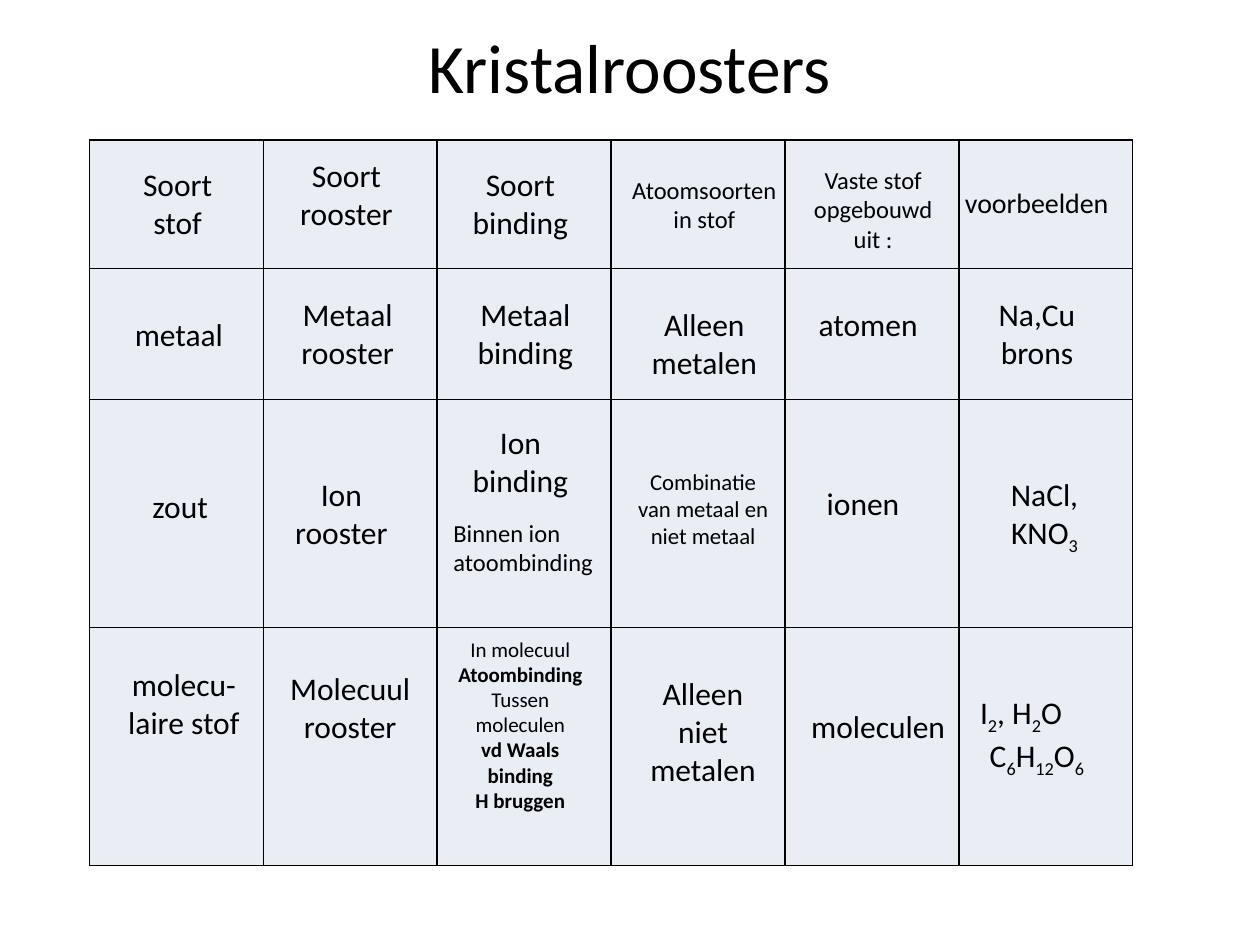
from lxml.etree import SubElement
from pptx import Presentation
from pptx.dml.color import RGBColor
from pptx.enum.text import MSO_ANCHOR, MSO_AUTO_SIZE, PP_ALIGN
from pptx.oxml.ns import qn
from pptx.util import Inches, Pt

COLORS = {"ink": "000000", "cell": "E9EDF4"}
FONT = "Calibri"
ROWS = [1.02, 1.04, 1.81, 1.89]
COLS = [1.38] * 6

# Left, top, width, height, size, text; "~" switches subscript, "*" starts a bold line
LABELS = [
    # Head row
    (0.94, 1.26, 0.94, 0.71, 18, "Soort stof"),
    (2.28, 1.19, 0.94, 0.71, 18, "Soort rooster"),
    (3.54, 1.26, 1.18, 0.71, 18, "Soort binding"),
    (4.88, 1.34, 1.42, 0.57, 14, "Atoomsoorten in stof"),
    (6.3, 1.26, 1.26, 0.81, 14, "Vaste stof opgebouwd uit :"),
    # Metal row
    (0.87, 2.45, 1.1, 0.4, 18, "metaal"),
    (2.13, 2.29, 1.26, 0.71, 18, "Metaal rooster"),
    (3.54, 2.29, 1.26, 0.71, 18, "Metaal binding"),
    (5.04, 2.37, 1.1, 0.71, 18, "Alleen metalen"),
    (6.38, 2.37, 1.02, 0.4, 18, "atomen"),
    (7.72, 2.29, 1.02, 0.71, 18, "Na,Cu\nbrons"),
    # Salt row
    (0.92, 3.82, 1.02, 0.4, 18, "zout"),
    (2.16, 3.72, 1.1, 0.71, 18, "Ion rooster"),
    (3.54, 3.31, 1.18, 0.71, 18, "Ion binding"),
    (4.95, 3.66, 1.26, 0.76, 13, "Combinatie van metaal en niet metaal"),
    (6.38, 3.79, 0.94, 0.4, 18, "ionen"),
    (7.74, 3.72, 1.1, 0.71, 18, "NaCl,\nKNO~3"),
    # Molecule row
    (0.83, 5.23, 1.26, 0.71, 18, "molecu-laire stof"),
    (2.15, 5.26, 1.26, 0.71, 18, "Molecuul\nrooster"),
    (3.5, 5, 1.26, 1.51, 12,
     "In molecuul\n*Atoombinding\nTussen moleculen\n*vd Waals binding\n*H bruggen"),
    (5.03, 5.3, 1.1, 1.01, 18, "Alleen niet metalen"),
    (6.3, 5.56, 1.34, 0.4, 18, "moleculen"),
]


class Board:
    def __init__(self, slide):
        self.slide = slide

    def color(self, name):
        return RGBColor.from_string(COLORS[name])

    def text(self, left, top, width, height, size, text, align=PP_ALIGN.CENTER):
        box = self.slide.shapes.add_textbox(
            Inches(left), Inches(top), Inches(width), Inches(height))
        frame = box.text_frame
        frame.word_wrap = True
        frame.auto_size = MSO_AUTO_SIZE.SHAPE_TO_FIT_TEXT
        for i, line in enumerate(text.split("\n")):
            para = frame.add_paragraph() if i else frame.paragraphs[0]
            para.alignment = align
            font = para.font
            font.name, font.size = FONT, Pt(size)
            font.bold = line.startswith("*")
            font.color.rgb = self.color("ink")
            for j, part in enumerate(line.lstrip("*").split("~")):
                if part:
                    run = para.add_run()
                    run.text = part
                    if j % 2:
                        run.font._element.set("baseline", "-25000")
        return box

    def title(self, left, top, width, height, size, text):
        frame = self.text(left, top, width, height, size, text).text_frame
        frame.auto_size = MSO_AUTO_SIZE.NONE
        frame.vertical_anchor = MSO_ANCHOR.MIDDLE

    def border(self, cell):
        props = cell._tc.get_or_add_tcPr()
        for i, side in enumerate(("lnL", "lnR", "lnT", "lnB")):
            line = props.makeelement(qn(f"a:{side}"), {"w": str(Pt(1))})
            fill = SubElement(line, qn("a:solidFill"))
            SubElement(fill, qn("a:srgbClr"), val=COLORS["ink"])
            props.insert(i, line)

    def grid(self, left, top, cols, rows):
        table = self.slide.shapes.add_table(
            len(rows), len(cols), Inches(left), Inches(top),
            Inches(sum(cols)), Inches(sum(rows))).table
        table.first_row = table.horz_banding = False
        for col, width in zip(table.columns, cols):
            col.width = Inches(width)
        for row, height in zip(table.rows, rows):
            row.height = Inches(height)
        for cell in table.iter_cells():
            cell.fill.solid()
            cell.fill.fore_color.rgb = self.color("cell")
            self.border(cell)


def main():
    deck = Presentation()
    deck.slide_width, deck.slide_height = Inches(10), Inches(7.5)
    board = Board(deck.slides.add_slide(deck.slide_layouts[6]))

    # Title and empty grid
    board.title(0.75, 0.21, 8.5, 0.63, 39.6, "Kristalroosters")
    board.grid(0.71, 1.11, COLS, ROWS)

    # Centred labels over the grid
    for label in LABELS:
        board.text(*label)

    # Left-aligned labels
    board.text(7.56, 1.42, 1.42, 0.37, 16, "voorbeelden", PP_ALIGN.LEFT)
    board.text(3.5, 4.06, 1.42, 0.57, 14, "Binnen ion\natoombinding", PP_ALIGN.LEFT)

    # Formulas: first line left, second centred
    box = board.text(7.68, 5.45, 1.1, 0.71, 18, "I~2~, H~2~O\nC~6~H~12~O~6")
    box.text_frame.paragraphs[0].alignment = PP_ALIGN.LEFT

    deck.save("out.pptx")


if __name__ == "__main__":
    main()
